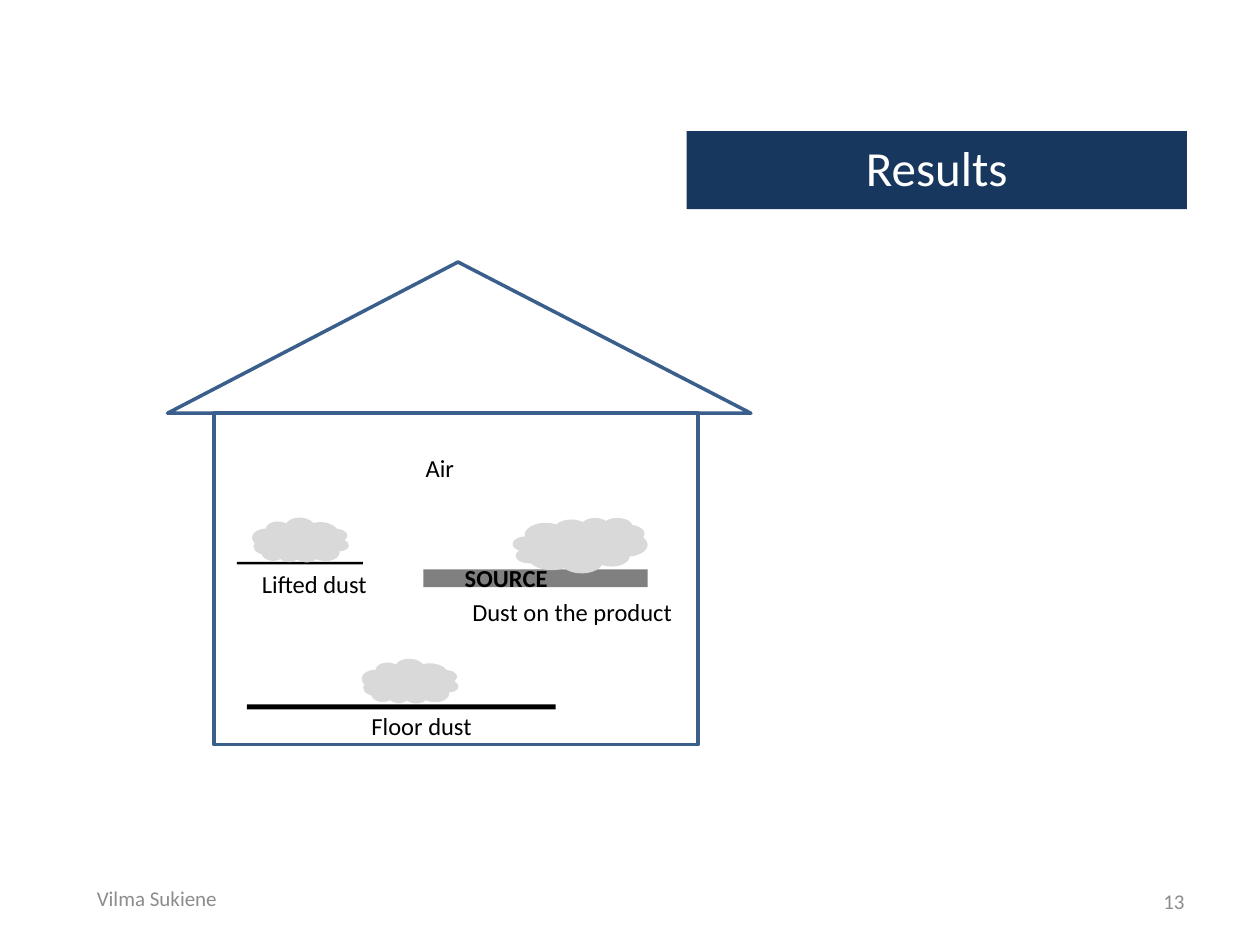
from pptx import Presentation
from pptx.dml.color import RGBColor
from pptx.enum.shapes import MSO_SHAPE as Preset
from pptx.enum.text import MSO_ANCHOR as Anchor, PP_ALIGN as Align
from pptx.util import Inches, Pt

NAVY, BLUE, GRAY, DUST, BLACK, WHITE, MUTED = (
    "17375E", "3A5F8C", "808080", "D9D9D9", "000000", "FFFFFF", "8C8C8C")
LABEL = {"size": Pt(14), "bold": False}
FOOTER = {"size": Pt(12), "bold": False}
TITLE = ("Results", (5.45, 1.04, 3.97, 0.62))

FOOTERS = [
    ("13", (7.17, 6.95, 2.33, 0.4), Align.RIGHT),
    ("Vilma Sukiene", (0.67, 6.93, 3.17, 0.4), Align.LEFT),
]
SURFACES = [
    ((3.36, 4.52, 1.78, 0.14), GRAY),
    ((1.88, 4.46, 1, 0.02), BLACK),
    ((1.96, 5.59, 2.45, 0.04), BLACK),
]
CLOUDS = [
    ((4.07, 4.11, 1.07, 0.44), 0),
    ((2, 4.11, 0.77, 0.36), 184.7),
    ((2.87, 5.23, 0.77, 0.36), 184.7),
]
LABELS = [
    ("SOURCE", (3.59, 4.42, 0.86, 0.34), {"bold": True}),
    ("Floor dust", (2.85, 5.59, 1, 0.34), {}),
    ("Lifted dust", (1.98, 4.47, 1.05, 0.34), {}),
    ("Dust on the product", (3.65, 4.69, 1.8, 0.34), {}),
    ("Air", (3.28, 3.55, 0.43, 0.34), {}),
]
HOUSE = [
    (Preset.RECTANGLE, (1.7, 3.28, 3.84, 2.63), []),
    (Preset.ISOSCELES_TRIANGLE, (1.33, 2.08, 4.63, 1.2), [0.498]),
]


def color(value):
    return RGBColor.from_string(value)


def box(bounds):
    return [Inches(length) for length in bounds]


def write(shape, text, text_color, font_format, align=Align.LEFT, anchor=Anchor.TOP, wrap=True):
    frame = shape.text_frame
    frame.word_wrap, frame.vertical_anchor = wrap, anchor
    paragraph = frame.paragraphs[0]
    paragraph.alignment = align
    run = paragraph.add_run()
    run.text = text
    for name, value in {"name": "Calibri", **font_format}.items():
        setattr(run.font, name, value)
    run.font.color.rgb = color(text_color)


def add_shape(slide, preset, bounds, fill=None, line=None, rotation=0):
    shape = slide.shapes.add_shape(preset, *box(bounds))
    shape.rotation, shape.shadow.inherit = rotation, False
    if fill:
        shape.fill.solid()
        shape.fill.fore_color.rgb = color(fill)
    else:
        shape.fill.background()
    if line:
        shape.line.color.rgb, shape.line.width = color(line), Pt(2)
    else:
        shape.line.fill.background()
    return shape


def main():
    """Build the slide of the house with its dust compartments."""
    presentation = Presentation()
    presentation.slide_width, presentation.slide_height = Inches(10), Inches(7.5)
    slide = presentation.slides.add_slide(presentation.slide_layouts[5])

    text, bounds = TITLE
    title = slide.shapes.title
    title.left, title.top, title.width, title.height = box(bounds)
    title.fill.solid()
    title.fill.fore_color.rgb = color(NAVY)
    write(title, text, WHITE, {"size": Pt(28)}, Align.CENTER)

    for text, bounds, align in FOOTERS:
        write(slide.shapes.add_textbox(*box(bounds)), text, MUTED, FOOTER, align, Anchor.MIDDLE)
    for bounds, fill in SURFACES:
        add_shape(slide, Preset.RECTANGLE, bounds, fill)
    for bounds, rotation in CLOUDS:
        add_shape(slide, Preset.CLOUD, bounds, DUST, rotation=rotation)
    for text, bounds, extra in LABELS:
        write(slide.shapes.add_textbox(*box(bounds)), text, BLACK, {**LABEL, **extra}, wrap=False)
    for preset, bounds, adjustments in HOUSE:
        shape = add_shape(slide, preset, bounds, line=BLUE)
        for index, value in enumerate(adjustments):
            shape.adjustments[index] = value

    presentation.save("out.pptx")


if __name__ == "__main__":
    main()
